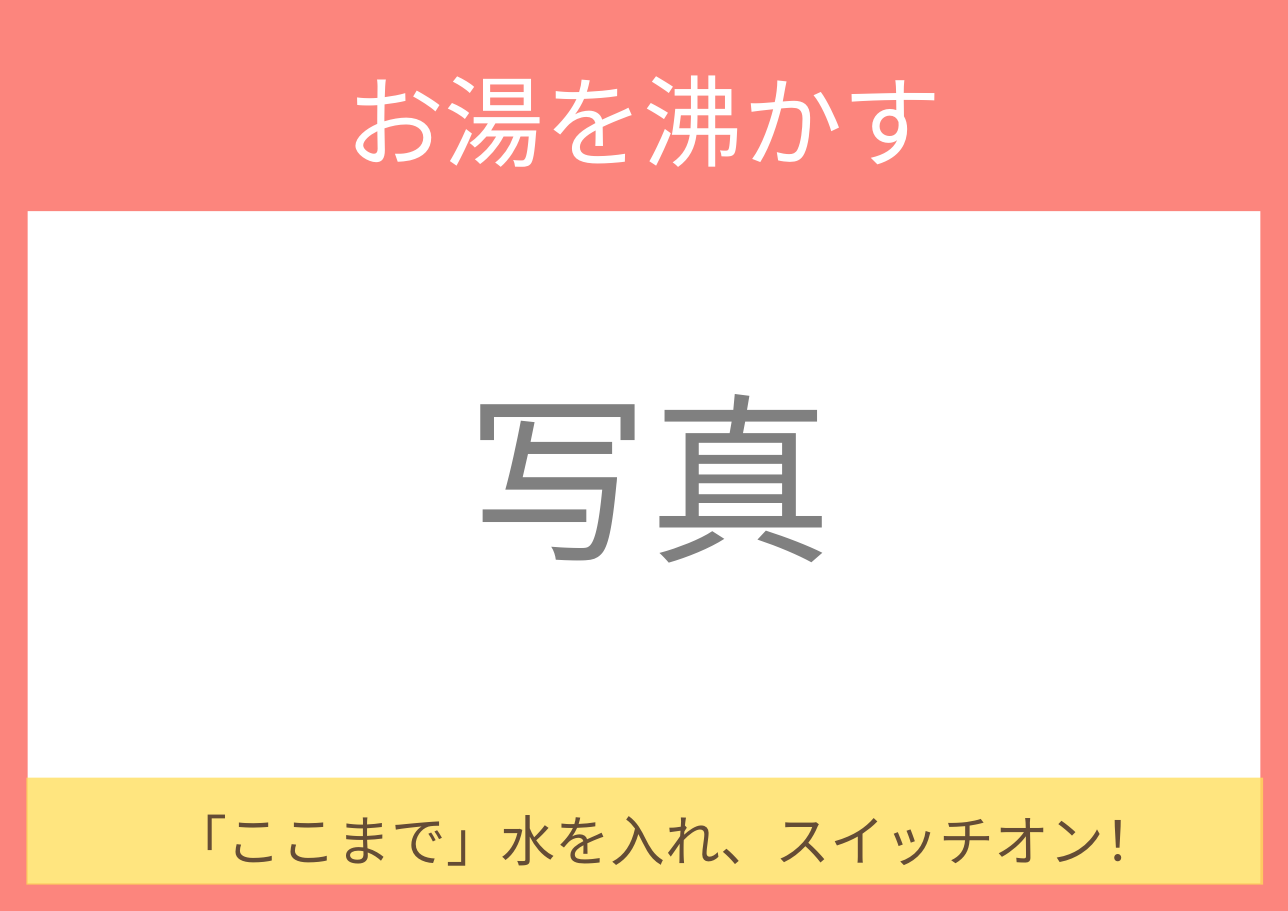
from pptx import Presentation, util as u
from pptx.dml.color import RGBColor
from pptx.enum import shapes as sh, text as tx
from pptx.oxml.ns import qn
from lxml import etree

WIDE, HIGH = 23.38, 16.53
EDGE = 0.5
FONT = "Calibri"
CORAL = RGBColor(0xFC, 0x85, 0x7D)
GOLD = RGBColor(0xFF, 0xDE, 0x59)
WHITE = RGBColor(0xFF, 0xFF, 0xFF)
BROWN = RGBColor(0x64, 0x4C, 0x35)
GREY = RGBColor(0x80, 0x80, 0x80)


def add_block(slide, kind, box, color, alpha=None):
    """Add a plain filled shape; alpha is its opacity in percent."""
    block = slide.shapes.add_shape(kind, *map(u.Inches, box))
    block.shadow.inherit = False
    block.line.fill.background()
    block.fill.solid()
    block.fill.fore_color.rgb = color
    if alpha:
        tint = block.fill._xPr.find(".//" + qn("a:srgbClr"))
        etree.SubElement(tint, qn("a:alpha"), val=str(alpha * 1000))
    return block


def set_text(item, box, words, size, lead, color):
    """Place a text holder and write one centred line in it."""
    item.left, item.top, item.width, item.height = map(u.Inches, box)
    frame = item.text_frame
    frame.word_wrap = True
    frame.auto_size = tx.MSO_AUTO_SIZE.NONE
    frame.vertical_anchor = tx.MSO_ANCHOR.TOP
    frame.margin_left = frame.margin_right = 0
    frame.margin_top = frame.margin_bottom = 0
    line = frame.paragraphs[0]
    line.alignment = tx.PP_ALIGN.CENTER
    line.line_spacing = u.Pt(lead)
    run = line.add_run()
    run.text = words
    font = run.font
    font.size, font.name = u.Pt(size), FONT
    font.color.rgb = color
    # Japanese glyphs use the East Asian font slot
    etree.SubElement(font._element, qn("a:ea"), typeface=FONT)


def add_label(slide, box, *style):
    set_text(slide.shapes.add_textbox(0, 0, 0, 0), box, *style)


def main():
    deck = Presentation()
    deck.slide_width, deck.slide_height = u.Inches(WIDE), u.Inches(HIGH)
    slide = deck.slides.add_slide(deck.slide_layouts[5])
    kinds = sh.MSO_SHAPE

    # Coral border, header and caption band
    border = add_block(slide, kinds.FRAME, (0, 0, WIDE, HIGH), CORAL)
    border.adjustments[0] = EDGE / HIGH
    add_block(slide, kinds.RECTANGLE, (0, 0, WIDE, 3.83), CORAL)
    add_block(slide, kinds.RECTANGLE, (0.48, 14.11, 22.45, 1.94), GOLD, 77)

    # Title, brought in front of the header
    title = slide.shapes.title
    slide.shapes._spTree.append(title._element)
    set_text(title, (5.43, 0.72, 12.51, 2.38),
             "お湯を沸かす", 130, 182, WHITE)

    # Caption and photo label
    add_label(slide, (0.41, 14.44, 23.35, 2.09),
              "「ここまで」水を入れ、スイッチオン！", 71.7, 100.4, BROWN)
    add_label(slide, (7.65, 9.23, 8.29, 1.91), "写真", 239, 100.4, GREY)

    deck.save("out.pptx")


if __name__ == "__main__":
    main()
